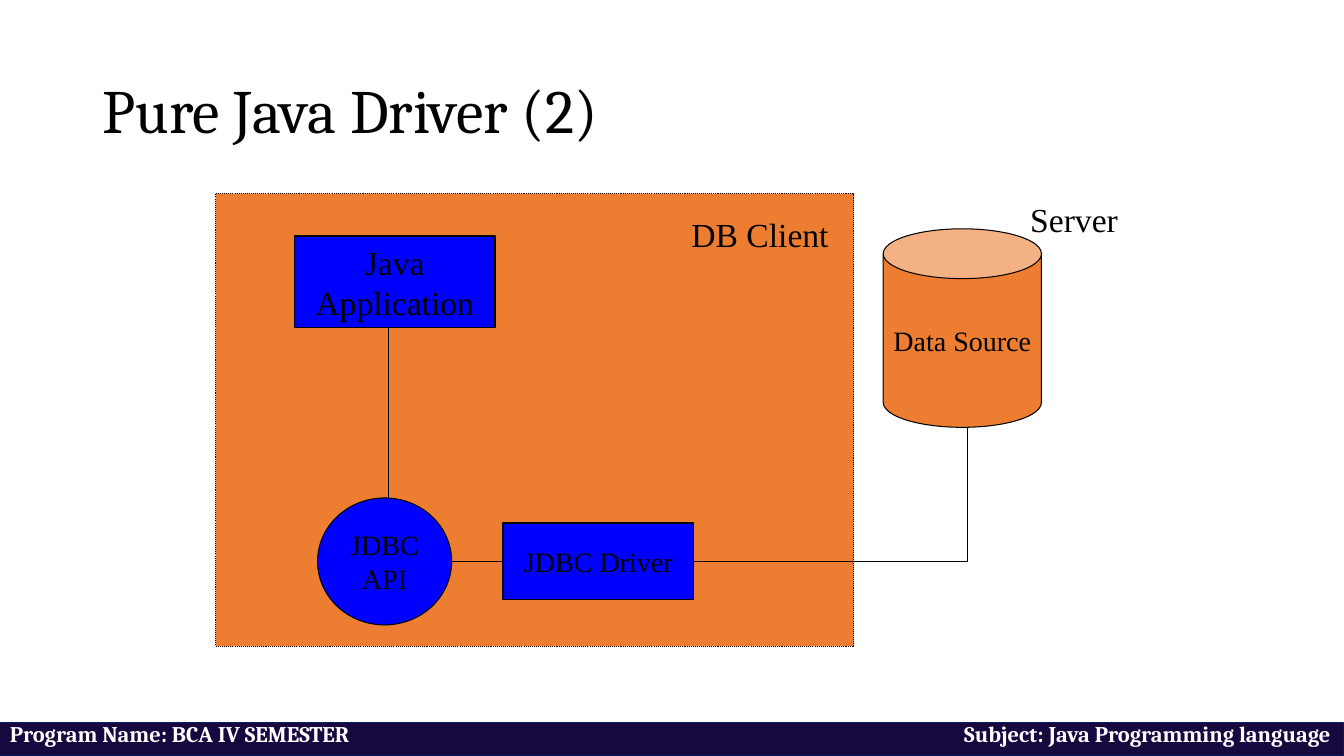
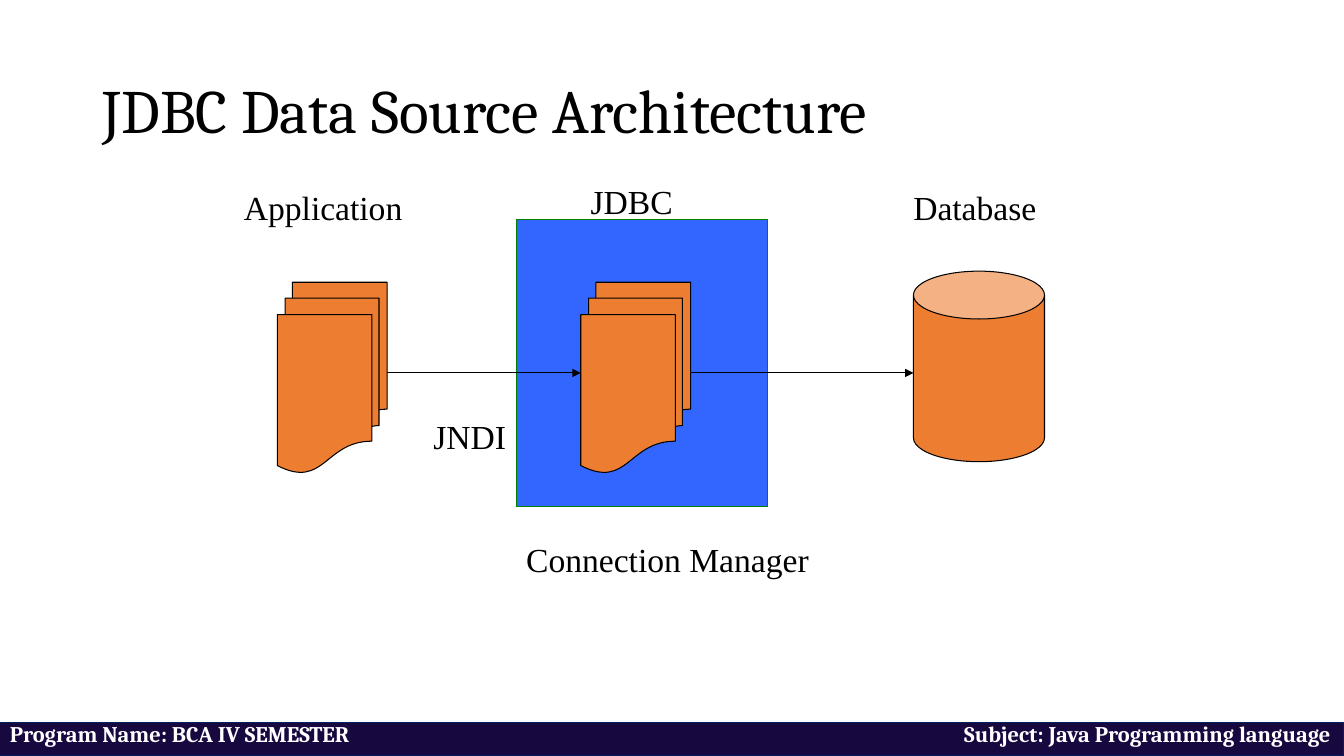
import pptx
import pptx.util
import pptx.dml.color
import pptx.enum.dml
import pptx.enum.shapes
import pptx.enum.text
import pptx.oxml.ns
from lxml import etree

Inches = pptx.util.Inches
Pt = pptx.util.Pt
qn = pptx.oxml.ns.qn
Kind = pptx.enum.shapes.MSO_SHAPE
Align = pptx.enum.text.PP_ALIGN
Anchor = pptx.enum.text.MSO_ANCHOR

BLACK, WHITE = "000000", "FFFFFF"
ORANGE, BLUE, SKY = "ED7D31", "0000FF", "3366FF"
NAVY, EDGE, GREEN = "170840", "002060", "008000"
HEAD, BODY = "Cambria", "Times New Roman"


def color(code):
    return pptx.dml.color.RGBColor.from_string(code)


def style(par, size, name=BODY, ink=BLACK, bold=False):
    par.font.size = Pt(size)
    par.font.name = name
    par.font.bold = bold
    par.font.color.rgb = color(ink)


def add_box(slide, kind, left, top, width, height, fill=ORANGE, edge=BLACK,
            weight=0.75, text="", size=20, adjust=None):
    """Add a filled preset shape, with centred text if any is given."""
    box = slide.shapes.add_shape(kind, Inches(left), Inches(top),
                                 Inches(width), Inches(height))
    box.shadow.inherit = False
    box.fill.solid()
    box.fill.fore_color.rgb = color(fill)
    box.line.color.rgb = color(edge)
    box.line.width = Pt(weight)
    if adjust is not None:
        box.adjustments[0] = adjust
    if text:
        frame = box.text_frame
        frame.margin_left = frame.margin_right = 0
        frame.margin_top = frame.margin_bottom = 0
        frame.text = text
        for par in frame.paragraphs:
            par.alignment = Align.CENTER
            style(par, size)
    return box


def add_label(slide, text, left, top, width):
    box = slide.shapes.add_textbox(Inches(left), Inches(top),
                                   Inches(width), Inches(0.5))
    box.text_frame.word_wrap = True
    box.text_frame.text = text
    style(box.text_frame.paragraphs[0], 24)


def add_line(slide, start, end, arrow=False):
    line = slide.shapes.add_connector(
        pptx.enum.shapes.MSO_CONNECTOR.STRAIGHT,
        *(Inches(n) for n in start + end))
    line.line.color.rgb = color(BLACK)
    line.line.width = Pt(0.75)
    props = line.element.spPr
    if arrow:
        etree.SubElement(props.find(qn("a:ln")), qn("a:tailEnd"),
                         type="triangle")
    etree.SubElement(props, qn("a:effectLst"))
    return line


def add_slide(deck, layout, title):
    slide = deck.slides.add_slide(layout)
    frame = slide.shapes.title.text_frame
    frame.text = title
    frame.vertical_anchor = Anchor.MIDDLE
    par = frame.paragraphs[0]
    par.alignment = Align.LEFT
    par.line_spacing = 0.9
    style(par, 44, HEAD)
    return slide


def set_footer(deck, slide):
    """Build the footer band and move it to the slide master."""
    band = add_box(slide, Kind.RECTANGLE, 0, 7.17, 13.33, 0.33, NAVY, EDGE)
    band.text_frame.margin_bottom = Inches(0.09)
    band.text_frame.text = ("Program Name: BCA IV SEMESTER"
                            "\tSubject: Java Programming language")
    par = band.text_frame.paragraphs[0]
    par.alignment = Align.LEFT
    par.line_spacing = 0.7
    props = par._p.get_or_add_pPr()
    tabs = etree.SubElement(props, qn("a:tabLst"))
    etree.SubElement(tabs, qn("a:tab"), pos=str(Inches(13.1)), algn="r")
    style(par, 16, HEAD, WHITE, True)
    deck.slide_master.shapes.element.append(band.element)


def draw_driver(slide):
    client = add_box(slide, Kind.RECTANGLE, 2.14, 1.92, 6.33, 4.49)
    client.line.dash_style = pptx.enum.dml.MSO_LINE.ROUND_DOT
    add_box(slide, Kind.RECTANGLE, 2.92, 2.34, 1.99, 0.91, BLUE, weight=1,
            text="Java\nApplication", size=24)
    add_label(slide, "DB Client", 6.76, 2.07, 1.7)
    add_box(slide, Kind.OVAL, 3.15, 4.94, 1.33, 1.26, BLUE,
            text="JDBC\nAPI")
    driver = add_box(slide, Kind.RECTANGLE, 4.99, 5.19, 1.89, 0.76, BLUE,
                     weight=1, text="JDBC Driver")
    add_box(slide, Kind.CAN, 8.76, 2.27, 1.57, 1.97, text="Data Source",
            adjust=0.315)
    add_label(slide, "Server", 10.12, 1.92, 1.4)

    level, drop = 5.57, 9.6
    add_line(slide, (3.85, 3.25), (3.85, 4.94))
    add_line(slide, (4.48, level), (4.99, level)).end_connect(driver, 1)
    add_line(slide, (6.88, level), (drop, level)).begin_connect(driver, 3)
    add_line(slide, (drop, 4.24), (drop, level))


def draw_source(slide):
    add_box(slide, Kind.RECTANGLE, 5.12, 2.18, 2.49, 2.85, SKY, GREEN)
    for left in (2.75, 5.76):
        add_box(slide, Kind.FLOWCHART_MULTIDOCUMENT, left, 2.8, 1.09, 1.89)
    add_box(slide, Kind.CAN, 9.06, 2.69, 1.3, 1.89, adjust=0.365)
    for start, end in ((3.84, 5.76), (6.85, 9.06)):
        add_line(slide, (start, 3.7), (end, 3.7), arrow=True)
    for text, left, top, width in (
            ("Application", 2.32, 1.81, 2.2),
            ("JDBC", 5.76, 1.75, 1.4),
            ("Database", 8.96, 1.81, 1.8),
            ("JNDI", 4.2, 4.08, 1.2),
            ("Connection Manager", 5.12, 5.3, 3.5)):
        add_label(slide, text, left, top, width)


def main():
    deck = pptx.Presentation()
    deck.slide_width, deck.slide_height = Inches(13.33), Inches(7.5)
    layout = deck.slide_layouts.get_by_name("Title Only")
    title = layout.placeholders[0]
    title.left, title.top = Inches(0.92), Inches(0.4)
    title.width, title.height = Inches(11.5), Inches(1.45)

    first = add_slide(deck, layout, "Pure Java Driver (2)")
    set_footer(deck, first)
    draw_driver(first)
    draw_source(add_slide(deck, layout, "JDBC Data Source Architecture"))
    deck.save("out.pptx")


if __name__ == "__main__":
    main()
